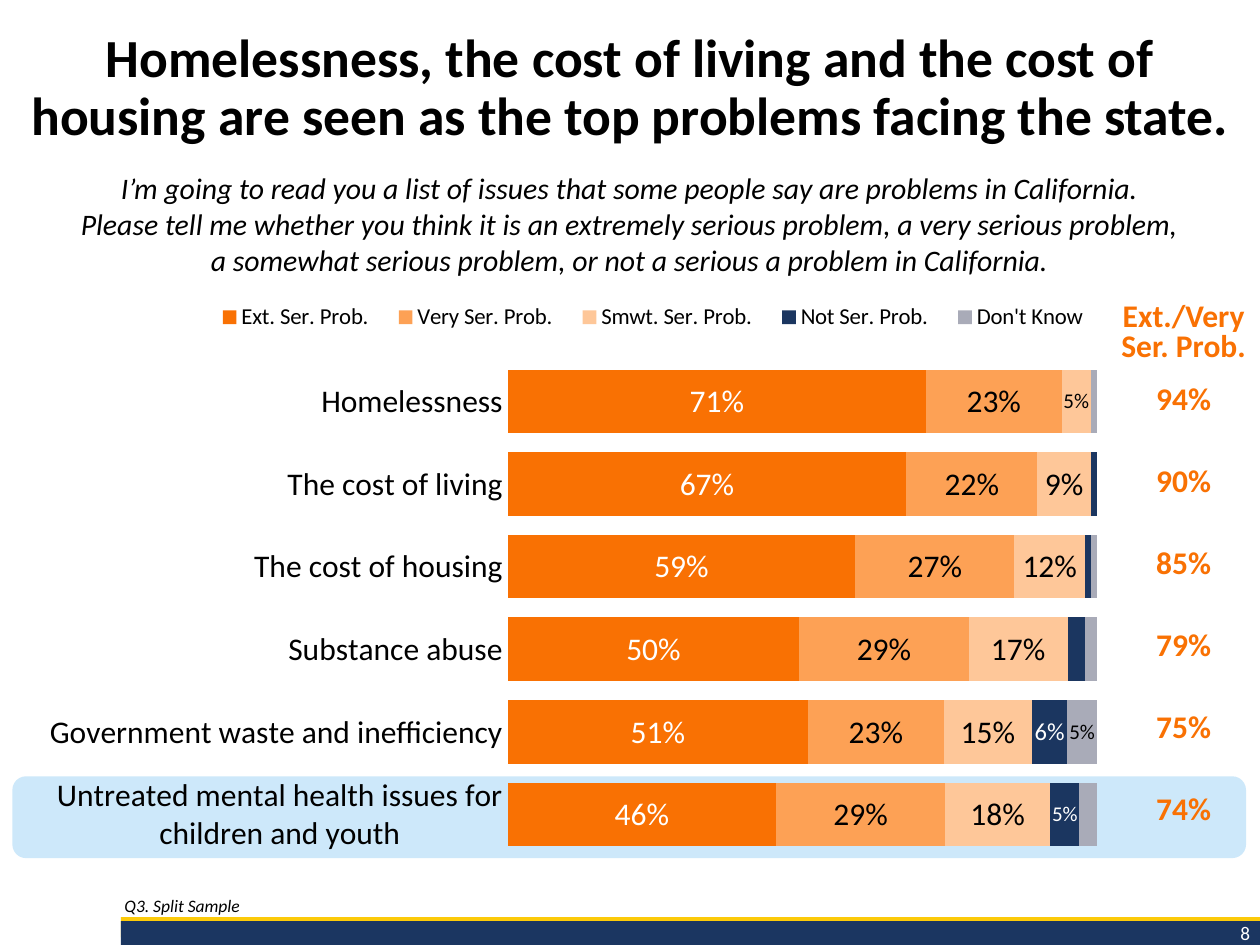
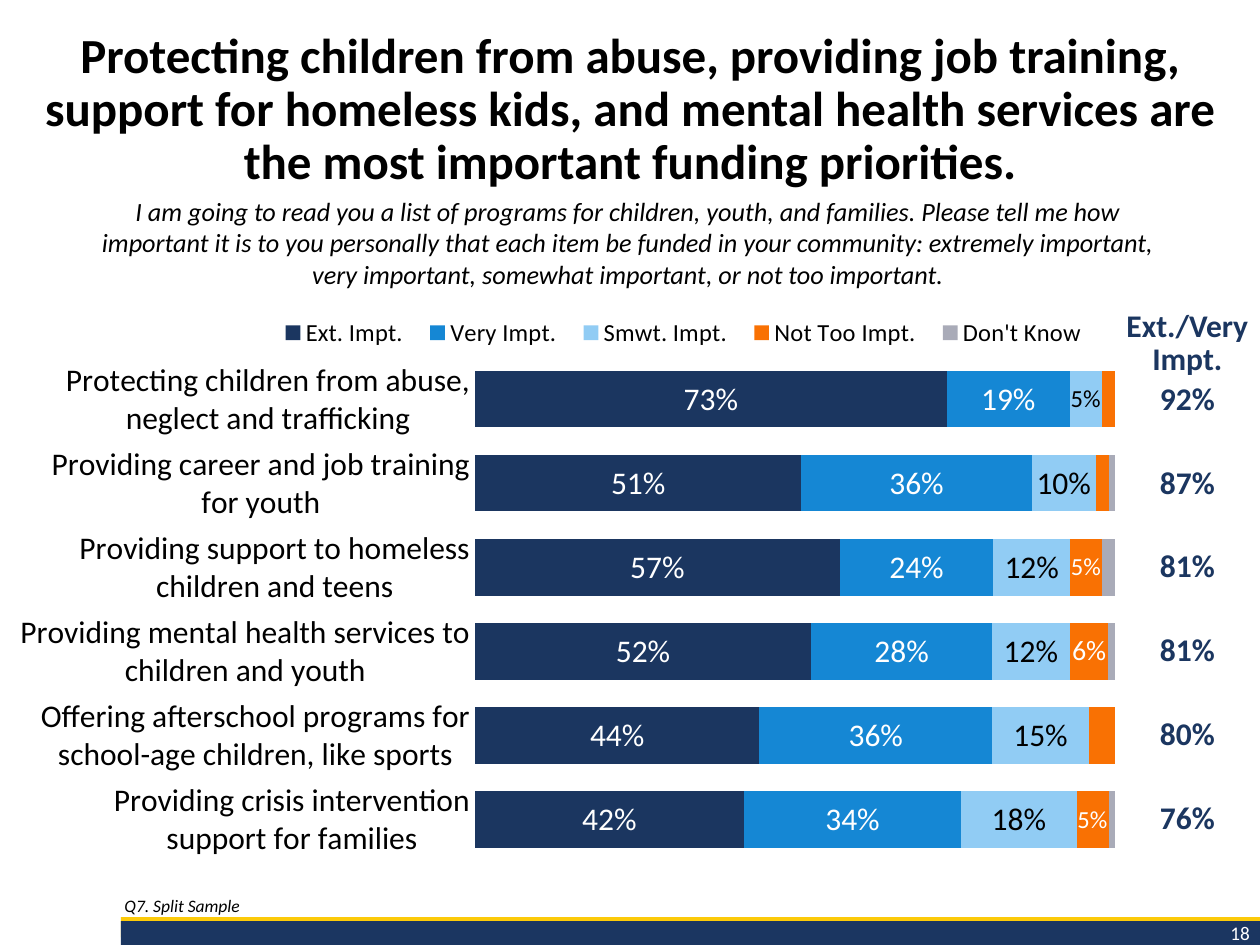
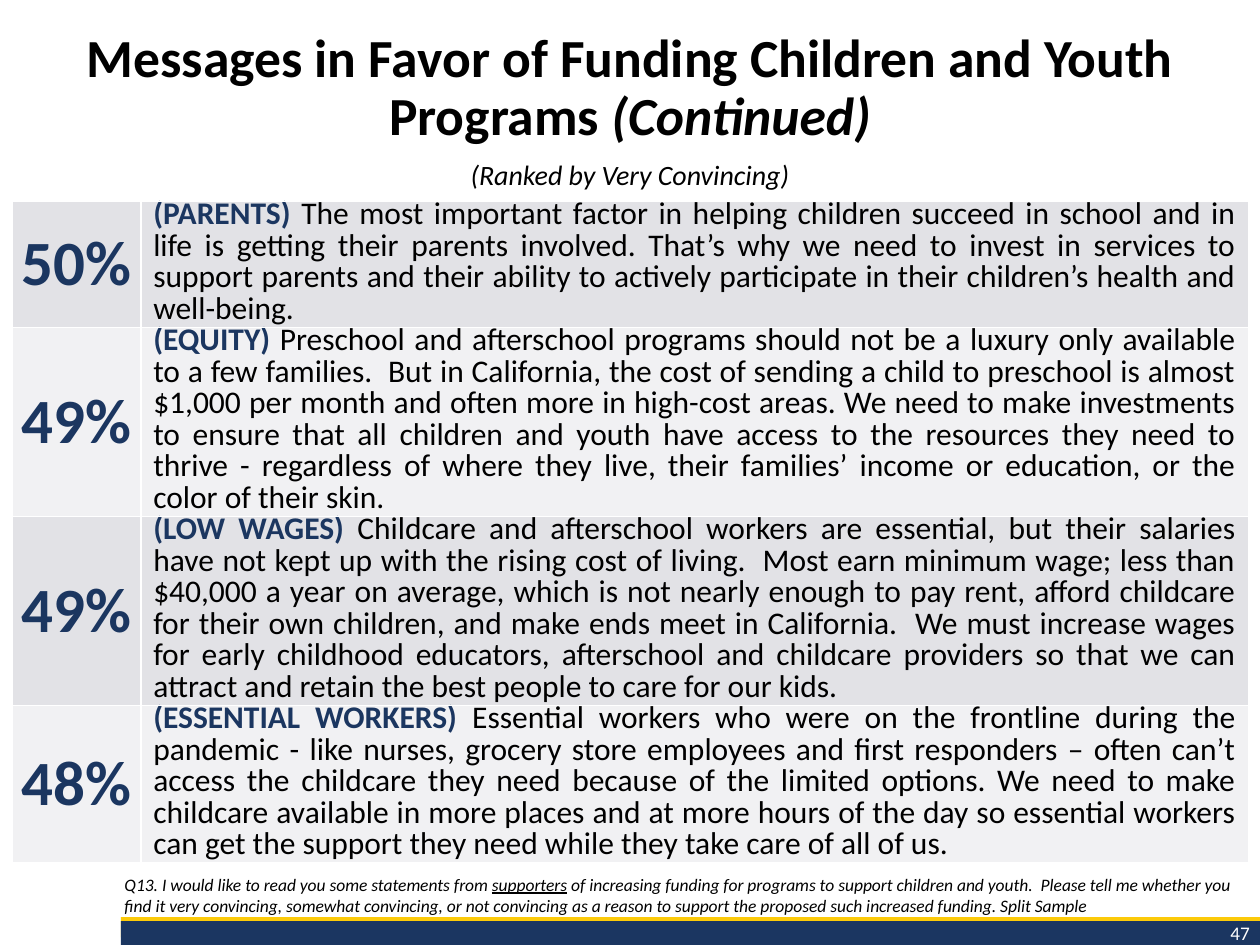
from lxml import etree
from pptx import Presentation
from pptx.chart.data import CategoryChartData
from pptx.dml.color import RGBColor
from pptx.enum.chart import XL_CHART_TYPE as ChartType, XL_LEGEND_POSITION as LegendPos
from pptx.enum.chart import XL_TICK_MARK as TickMark
from pptx.enum.shapes import MSO_SHAPE as Shape
from pptx.enum.text import MSO_ANCHOR as Anchor, MSO_AUTO_SIZE as AutoSize, PP_ALIGN as Align
from pptx.oxml.ns import qn
from pptx.util import Cm, Pt

FONT = "Calibri"
BLACK, WHITE = "000000", "FFFFFF"
NAVY, BAND_NAVY, GOLD = "1B3660", "1B3661", "FCCA09"
BLUE, SKY, PALE_BLUE = "1587D4", "91CCF4", "CDE8FA"
ORANGE, LIGHT_ORANGE, PEACH = "F97103", "FDA155", "FEC799"
GREY, ROW_DARK, ROW_LIGHT = "A9ABB8", "E2E2E6", "F1F1F3"
PLAIN_TABLE = "{2D5ABB26-0587-4C30-8999-92F81FD0307C}"
SLIDE_W, SLIDE_H = Cm(25.4), Cm(19.05)
MIN_LABEL = 0.05  # smaller bar segments carry no label

# Series: name, fill, label colour, values from the first category to the last
PROBLEMS = [
    "Homelessness",
    "The cost of living",
    "The cost of housing",
    "Substance abuse",
    "Government waste and inefficiency",
    "Untreated mental health issues for children and youth",
]
PROBLEM_SERIES = [
    ("Ext. Ser. Prob.", ORANGE, WHITE, (0.71, 0.67, 0.59, 0.5, 0.51, 0.46)),
    ("Very Ser. Prob.", LIGHT_ORANGE, BLACK, (0.23, 0.22, 0.27, 0.29, 0.23, 0.29)),
    ("Smwt. Ser. Prob.", PEACH, BLACK, (0.05, 0.09, 0.12, 0.17, 0.15, 0.18)),
    ("Not Ser. Prob.", NAVY, WHITE, (0, 0.01, 0.01, 0.03, 0.06, 0.05)),
    ("Don't Know", GREY, BLACK, (0.01, 0, 0.01, 0.02, 0.05, 0.03)),
]
PROGRAMS = [
    "Protecting children from abuse, neglect and trafficking",
    "Providing career and job training for youth",
    "Providing support to homeless children and teens",
    "Providing mental health services to children and youth",
    "Offering afterschool programs for school-age children, like sports",
    "Providing crisis intervention support for families",
]
PROGRAM_SERIES = [
    ("Ext. Impt.", NAVY, WHITE, (0.73, 0.51, 0.57, 0.52, 0.44, 0.42)),
    ("Very Impt.", BLUE, WHITE, (0.19, 0.36, 0.24, 0.28, 0.36, 0.34)),
    ("Smwt. Impt.", SKY, BLACK, (0.05, 0.1, 0.12, 0.12, 0.15, 0.18)),
    ("Not Too Impt.", ORANGE, WHITE, (0.02, 0.02, 0.05, 0.06, 0.04, 0.05)),
    ("Don't Know", GREY, BLACK, (0, 0.01, 0.02, 0.01, 0, 0.01)),
]
# Messages: share, lines of text, heading, statement
MESSAGES = [
    ("50%", 4, "(PARENTS) ",
     "The most important factor in helping children succeed in school and in life is getting "
     "their parents involved. That’s why we need to invest in services to support parents and "
     "their ability to actively participate in their children’s health and well-being."),
    ("49%", 6, "(EQUITY)",
     " Preschool and afterschool programs should not be a luxury only available to a few "
     "families.  But in California, the cost of sending a child to preschool is almost $1,000 "
     "per month and often more in high-cost areas. We need to make investments to ensure that "
     "all children and youth have access to the resources they need to thrive - regardless of "
     "where they live, their families’ income or education, or the color of their skin."),
    ("49%", 6, "(LOW WAGES) ",
     "Childcare and afterschool workers are essential, but their salaries have not kept up with "
     "the rising cost of living.  Most earn minimum wage; less than $40,000 a year on average, "
     "which is not nearly enough to pay rent, afford childcare for their own children, and make "
     "ends meet in California.  We must increase wages for early childhood educators, "
     "afterschool and childcare providers so that we can attract and retain the best people to "
     "care for our kids."),
    ("48%", 5, "(ESSENTIAL WORKERS) ",
     "Essential workers who were on the frontline during the pandemic - like nurses, grocery "
     "store employees and first responders – often can’t access the childcare they need because "
     "of the limited options. We need to make childcare available in more places and at more "
     "hours of the day so essential workers can get the support they need while they take care "
     "of all of us."),
]


def rgb(color):
    return RGBColor.from_string(color)


def style_font(font, size, color=BLACK, bold=False, italic=False):
    font.name, font.size = FONT, Pt(size)
    font.bold, font.italic = bold, italic
    font.color.rgb = rgb(color)


def write(p, parts, size, align=Align.LEFT, **style):
    """Fill a paragraph with one run per part, all in one style; return the runs."""
    p.text = parts[0]
    for part in parts[1:]:
        p.add_run().text = part
    p.alignment = align
    for r in p.runs:
        style_font(r.font, size, **style)
    return p.runs


def add_box(slide, box, parts, size, align=Align.LEFT, anchor=Anchor.TOP, **style):
    tf = slide.shapes.add_textbox(*box).text_frame
    tf.word_wrap = True
    tf.vertical_anchor = anchor
    return write(tf.paragraphs[0], parts, size, align, **style)


def add_block(slide, kind, box, color):
    sp = slide.shapes.add_shape(kind, *box)
    sp.shadow.inherit = False
    sp.fill.solid()
    sp.fill.fore_color.rgb = rgb(color)
    sp.line.fill.background()


def add_slide(prs, title, number, size=30.6):
    """Start a slide with its title, footer bands and page number."""
    slide = prs.slides.add_slide(prs.slide_layouts[5])
    sp = slide.shapes.title
    sp.left, sp.top, sp.width, sp.height = 0, Cm(0.51), SLIDE_W, Cm(3.1)
    tf = sp.text_frame
    tf.word_wrap, tf.auto_size, tf.vertical_anchor = True, AutoSize.NONE, Anchor.TOP
    p = tf.paragraphs[0]
    p.line_spacing = 0.9
    write(p, title, size, Align.CENTER, bold=True)

    add_block(slide, Shape.RECTANGLE, (Cm(2.44), Cm(18.49), Cm(22.96), Cm(0.41)), GOLD)
    add_block(slide, Shape.RECTANGLE, (Cm(2.44), Cm(18.57), Cm(22.96), Cm(0.48)), BAND_NAVY)
    add_box(slide, (Cm(21.69), Cm(18.44), Cm(3.76), Cm(0.74)), [number], 11,
            Align.RIGHT, color=WHITE)
    return slide


def add_question(slide, box, text, size):
    add_box(slide, box, [text], size, Align.CENTER, italic=True)


def add_footnote(slide, *parts):
    box = Cm(2.26), Cm(17.22), Cm(23.09), Cm(1.37)
    runs = add_box(slide, box, parts, 10, anchor=Anchor.BOTTOM, italic=True)
    return runs


def set_layout(element, x, y, w, h, inner=False):
    """Place a chart's plot area or legend by fractions of the chart."""
    for old in element.findall(qn("c:layout")):
        element.remove(old)
    layout = etree.Element(qn("c:layout"))
    manual = etree.SubElement(layout, qn("c:manualLayout"))
    settings = [("layoutTarget", "inner")] if inner else []
    settings += [("xMode", "edge"), ("yMode", "edge"), ("x", x), ("y", y), ("w", w), ("h", h)]
    for tag, value in settings:
        etree.SubElement(manual, qn(f"c:{tag}")).set("val", str(value))
    if inner:
        element.insert(0, layout)
    else:
        element.find(qn("c:legendPos")).addnext(layout)


def add_bar_chart(slide, box, categories, series, gap, plot_area, legend_area,
                  legend_size, small_labels):
    data = CategoryChartData(number_format="0%")
    data.categories = categories
    for name, _, _, values in series:
        data.add_series(name, values)
    chart = slide.shapes.add_chart(ChartType.BAR_STACKED_100, *box, data).chart
    style_font(chart.font, 18)
    chart.has_title = False

    plot = chart.plots[0]
    plot.gap_width, plot.overlap, plot.vary_by_categories = gap, 100, False
    for ser, (_, fill, label_color, values) in zip(plot.series, series):
        ser.format.fill.solid()
        ser.format.fill.fore_color.rgb = rgb(fill)
        ser.data_labels.show_value = False
        for i, value in enumerate(values):
            if value >= MIN_LABEL:
                label = ser.points[i].data_label
                style_font(label.font, small_labels.get(value, 18), label_color)

    axis = chart.category_axis
    axis.reverse_order = True
    axis.major_tick_mark = axis.minor_tick_mark = TickMark.NONE
    axis.format.line.fill.background()
    style_font(axis.tick_labels.font, 18)
    values_axis = chart.value_axis
    values_axis.visible = values_axis.has_major_gridlines = False
    values_axis.minimum_scale, values_axis.maximum_scale = 0, 1

    chart.has_legend = True
    legend = chart.legend
    legend.position, legend.include_in_layout = LegendPos.TOP, False
    style_font(legend.font, legend_size)
    set_layout(plot._element.getparent(), *plot_area, inner=True)
    set_layout(legend._element, *legend_area)


def add_table(slide, left, top, widths, heights):
    frame = slide.shapes.add_table(len(heights), len(widths), left, top,
                                   sum(widths), sum(heights))
    table = frame.table
    table.first_row = table.horz_banding = False
    for column, width in zip(table.columns, widths):
        column.width = width
    for row, height in zip(table.rows, heights):
        row.height = height
    return table


def set_cell(cell, anchor, side, top, fill=None):
    """Format a cell and return its paragraph."""
    cell.vertical_anchor = anchor
    cell.margin_left = cell.margin_right = side
    cell.margin_top, cell.margin_bottom = top, 0
    if fill:
        cell.fill.solid()
        cell.fill.fore_color.rgb = rgb(fill)
    else:
        cell.fill.background()
    return cell.text_frame.paragraphs[0]


def add_totals(slide, left, top, width, heights, header, spacing, totals, color):
    """Column of combined shares; heights are for the header, first and later rows."""
    head, first, later = heights
    rows = [head, first] + [later] * (len(totals) - 1)
    table = add_table(slide, left, top, [width], rows)
    table._tbl.tblPr.find(qn("a:tableStyleId")).text = PLAIN_TABLE
    for i, text in enumerate([header, *totals]):
        p = set_cell(table.cell(i, 0), Anchor.BOTTOM, Cm(0.03), Cm(0.03))
        if i == 0:
            p.line_spacing = Pt(spacing)
        write(p, [text], 18, Align.CENTER, color=color, bold=True)


def add_messages(slide):
    line = Pt(18)
    table = add_table(slide, Cm(0.25), Cm(4.06), [Cm(2.59), Cm(22.33)],
                      [line * lines for _, lines, _, _ in MESSAGES])
    for i, (share, _, heading, statement) in enumerate(MESSAGES):
        fill = ROW_LIGHT if i % 2 else ROW_DARK
        p = set_cell(table.cell(i, 0), Anchor.MIDDLE, Cm(0.03), 0, fill)
        write(p, [share], 36, Align.CENTER, color=NAVY, bold=True)
        p = set_cell(table.cell(i, 1), Anchor.MIDDLE, Cm(0.25), 0, fill)
        p.line_spacing = line
        runs = write(p, [heading, statement], 18, Align.JUSTIFY)
        style_font(runs[0].font, 18, NAVY, bold=True)


def build_problems(prs):
    slide = add_slide(prs, ["Homelessness, the cost of living and the cost of housing are seen "
                            "as the top problems facing the state."], "8")
    add_block(slide, Shape.ROUNDED_RECTANGLE,
              (Cm(0.25), Cm(15.65), Cm(24.87), Cm(1.65)), PALE_BLUE)
    add_footnote(slide, "Q3. Split Sample")
    add_bar_chart(slide, (Cm(0.51), Cm(6.05), Cm(22), Cm(11.56)), PROBLEMS, PROBLEM_SERIES,
                  gap=30, plot_area=(0.442, 0.105, 0.54, 0.864),
                  legend_area=(0.16, 0, 0.83, 0.06), legend_size=13,
                  small_labels={0.05: 12, 0.06: 14})
    add_totals(slide, Cm(22.4), Cm(6.15), Cm(2.92), (Cm(1.22), Cm(1.07), Cm(1.65)),
               "Ext./Very Ser. Prob.", 17, ["94%", "90%", "85%", "79%", "75%", "74%"], ORANGE)
    add_question(slide, (Cm(0.66), Cm(3.3), Cm(24.08), Cm(2.44)),
                 "I’m going to read you a list of issues that some people say are problems in "
                 "California.\nPlease tell me whether you think it is an extremely serious "
                 "problem, a very serious problem,\na somewhat serious problem, or not a serious "
                 "a problem in California.", 17)


def build_programs(prs):
    slide = add_slide(prs, ["Protecting children from abuse, providing job training, support for "
                            "homeless kids, and mental health services are the most important "
                            "funding priorities."], "18", size=28)
    add_totals(slide, Cm(22.45), Cm(6.27), Cm(2.97), (Cm(1.37), Cm(0.8), Cm(1.69)),
               "Ext./Very Impt.", 19, ["92%", "87%", "81%", "81%", "80%", "76%"], NAVY)
    add_footnote(slide, "Q7. Split Sample")
    add_question(slide, (Cm(1.42), Cm(3.81), Cm(22.48), Cm(2.18)),
                 "I am going to read you a list of programs for children, youth, and families. "
                 "Please tell me how important it is to you personally that each item be funded "
                 "in your community: extremely important, very important, somewhat important, "
                 "or not too important.", 15)
    add_bar_chart(slide, (Cm(0.38), Cm(6.17), Cm(22.71), Cm(11.94)), PROGRAMS, PROGRAM_SERIES,
                  gap=48, plot_area=(0.405, 0.086, 0.568, 0.852),
                  legend_area=(0.22, 0.01, 0.74, 0.07), legend_size=14,
                  small_labels={0.05: 14, 0.06: 16})


def build_messages(prs):
    slide = add_slide(prs, ["Messages in Favor of Funding Children and Youth Programs ",
                            "(Continued)"], "47")
    slide.shapes.title.text_frame.paragraphs[0].runs[1].font.italic = True
    add_question(slide, (0, Cm(3.05), SLIDE_W, Cm(0.94)), "(Ranked by Very Convincing)", 16)
    add_messages(slide)
    runs = add_footnote(
        slide, "Q13. I would like to read you some statements from ", "supporters",
        " of increasing funding for programs to support children and youth.  Please tell me "
        "whether you find it very convincing, somewhat convincing, or not convincing as a reason "
        "to support the proposed such increased funding. Split Sample")
    runs[1].font.underline = True


def main():
    prs = Presentation()
    prs.slide_width, prs.slide_height = SLIDE_W, SLIDE_H
    build_problems(prs)
    build_programs(prs)
    build_messages(prs)
    prs.save("out.pptx")


if __name__ == "__main__":
    main()
